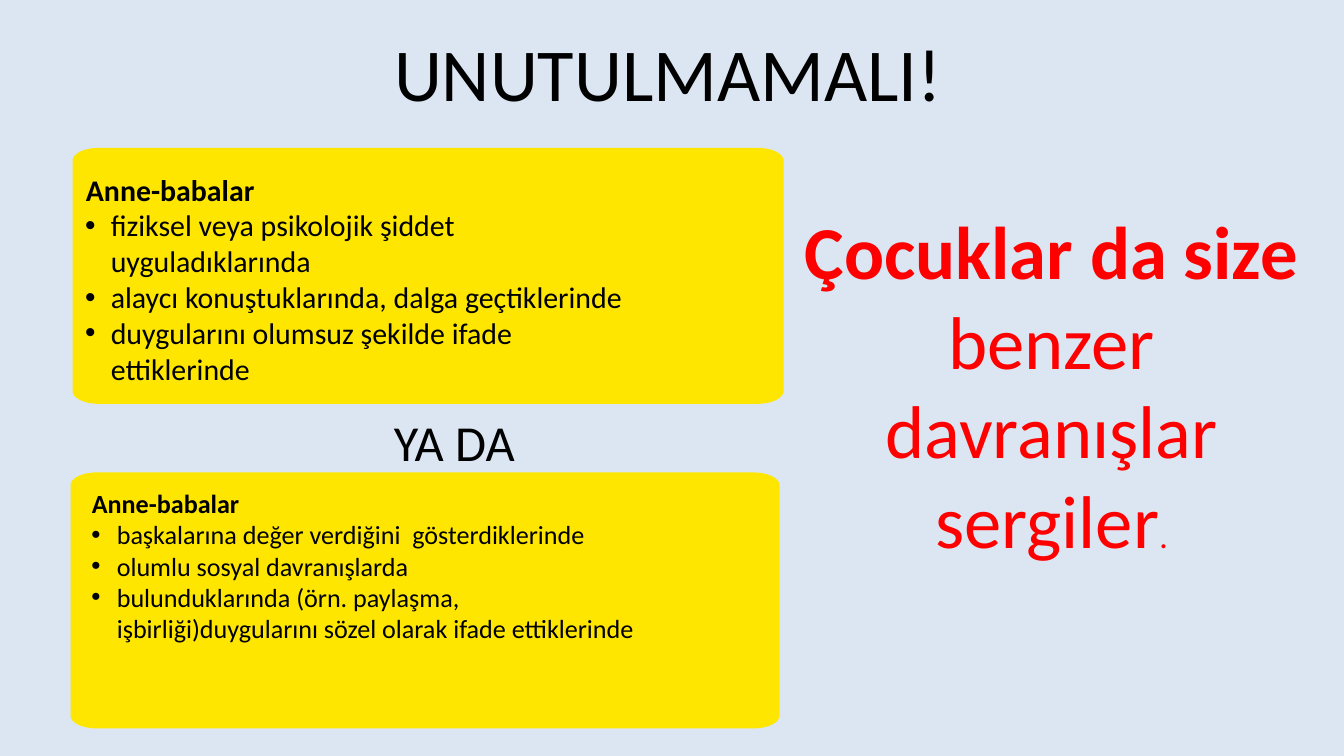
from math import cos, pi, sin

from lxml.etree import SubElement
from pptx import Presentation
from pptx.dml.color import RGBColor
from pptx.enum.text import MSO_ANCHOR, PP_ALIGN
from pptx.oxml.ns import qn
from pptx.util import Inches, Pt

# Content
W, H = 20, 11.25
FONT = "Calibri"
BG, YELLOW, BLACK, RED = "DCE6F2", "FEE600", "000000", "FF0000"
TITLE, BETWEEN = "UNUTULMAMALI!", "YA DA"
HEADING = "Anne-babalar"

# Each item is a list of lines; the first one carries the bullet
HARMFUL = [
    ["fiziksel veya psikolojik şiddet", "uyguladıklarında"],
    ["alaycı konuştuklarında, dalga geçtiklerinde"],
    ["duygularını olumsuz şekilde ifade", "ettiklerinde"],
]
HELPFUL = [
    ["başkalarına değer verdiğini  gösterdiklerinde"],
    ["olumlu sosyal davranışlarda"],
    ["bulunduklarında (örn. paylaşma, işbirliği)duygularını sözel olarak ifade ettiklerinde"],
]

# Panel place, text place, text size, items
PANELS = [
    ((1.08, 2.2, 10.58, 3.81), (1.08, 2.5, 10.51, 3.64), 32, HARMFUL),
    ((1.05, 7.03, 10.55, 3.81), (1.17, 7.2, 10.5, 3.4), 28, HELPFUL),
]
RESULT_LEAD, RESULT = "Çocuklar da size", "benzer davranışlar sergiler"


def rgb(color):
    return RGBColor.from_string(color)


def add_panel(s, x, y, w, h, rx=0.39, ry=0.19, steps=12):
    """Rectangle whose corners are quarter ellipses."""
    centres = [(x + w - rx, y + h - ry), (x + rx, y + h - ry),
               (x + rx, y + ry), (x + w - rx, y + ry)]
    points = []
    for quarter, (cx, cy) in enumerate(centres):
        for i in range(steps + 1):
            a = (quarter + i / steps) * pi / 2
            points.append((Inches(cx + rx * cos(a)), Inches(cy + ry * sin(a))))
    fb = s.shapes.build_freeform(*points[0])
    fb.add_line_segments(points[1:], close=True)
    sp = fb.convert_to_shape()
    sp.shadow.inherit = False
    sp.fill.solid()
    sp.fill.fore_color.rgb = rgb(YELLOW)
    sp.line.fill.background()


def add_box(s, place, anchor=MSO_ANCHOR.TOP):
    tf = s.shapes.add_textbox(*map(Inches, place)).text_frame
    tf.word_wrap = True
    tf.vertical_anchor = anchor
    return tf


def add_run(p, text, size, color=BLACK, bold=False):
    r = p.add_run()
    r.text = text
    r.font.name, r.font.size, r.font.bold = FONT, Pt(size), bold
    r.font.color.rgb = rgb(color)


def add_text(tf, text, size, color=BLACK, bold=False, align=PP_ALIGN.LEFT,
             before=0, left=0, hang=0, right=0, bullet=False):
    p = tf.paragraphs[0] if not tf.paragraphs[0].runs else tf.add_paragraph()
    p.alignment = align
    p.space_before = Pt(before)
    pPr = p._p.get_or_add_pPr()
    for name, value in (("marL", left), ("marR", right), ("indent", -hang)):
        pPr.set(name, str(Inches(value)))
    if bullet:
        SubElement(pPr, qn("a:buFont"), typeface="Arial")
        SubElement(pPr, qn("a:buChar"), char="•")
    add_run(p, text, size, color, bold)
    return p


prs = Presentation()
prs.slide_width, prs.slide_height = Inches(W), Inches(H)
s = prs.slides.add_slide(prs.slide_layouts[6])
s.background.fill.solid()
s.background.fill.fore_color.rgb = rgb(BG)

# Title and the words between the panels
for text, place, size in [(TITLE, (4.67, 0.34, 10.55, 1.45), 80),
                          (BETWEEN, (5.75, 6.06, 2.02, 1.01), 54)]:
    add_text(add_box(s, place, MSO_ANCHOR.MIDDLE), text, size, align=PP_ALIGN.CENTER)

# Yellow panels with bulleted lists
for panel, place, size, items in PANELS:
    add_panel(s, *panel)
    tf = add_box(s, place)
    add_text(tf, HEADING, size, bold=True, before=2.2, left=0.1)
    for lines in items:
        for i, line in enumerate(lines):
            add_text(tf, line, size, left=0.47, right=2,
                     hang=0 if i else 0.38, bullet=i == 0)

# Red conclusion on the right
tf = add_box(s, (11.79, 3, 7.72, 7.14))
add_text(tf, RESULT_LEAD, 80, RED, bold=True, align=PP_ALIGN.CENTER, before=1.8)
p = add_text(tf, RESULT, 80, RED, align=PP_ALIGN.CENTER)
add_run(p, ".", 36, RED)

prs.save("out.pptx")
